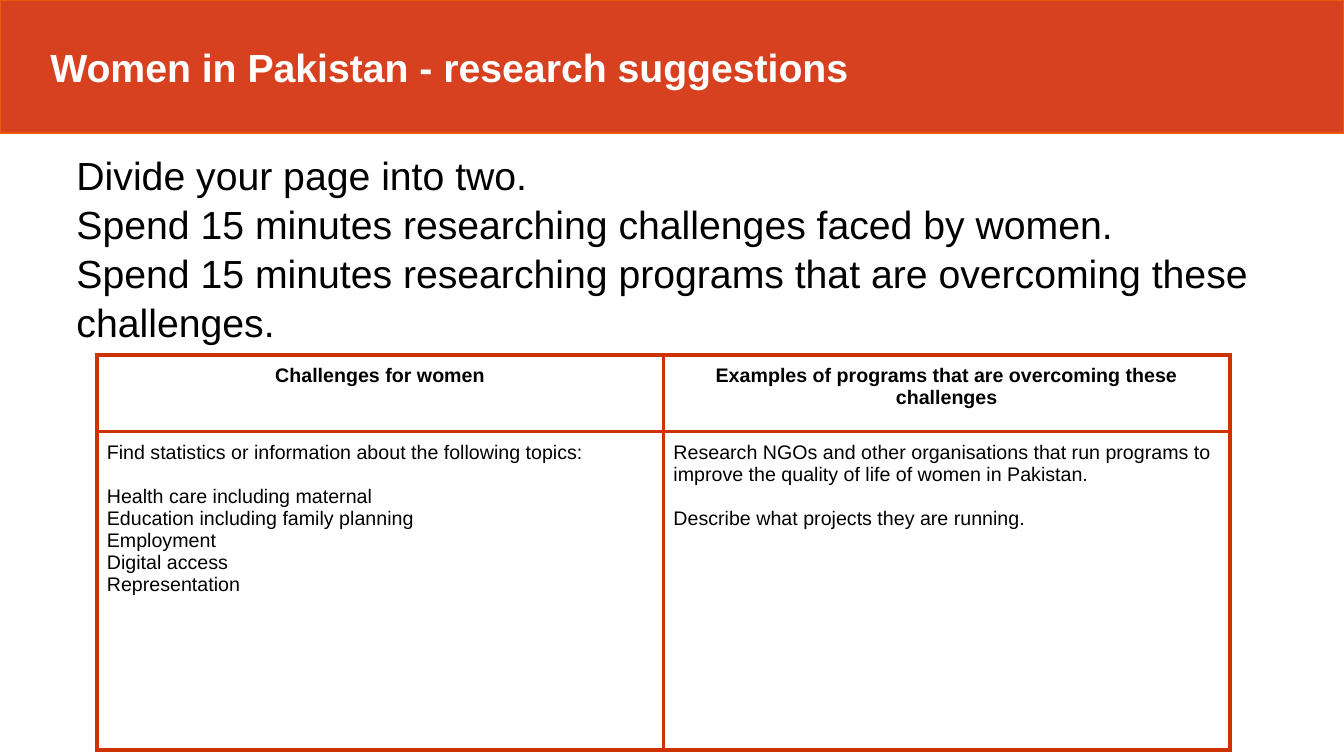
from dataclasses import dataclass

from lxml.etree import SubElement
from pptx import Presentation
from pptx.dml.color import RGBColor
from pptx.enum.shapes import MSO_SHAPE
from pptx.enum.text import MSO_ANCHOR, PP_ALIGN
from pptx.oxml.ns import qn
from pptx.slide import Slide
from pptx.table import _Cell
from pptx.text.text import TextFrame
from pptx.util import Emu, Pt

PAGE_WIDTH, PAGE_HEIGHT = 1333, 750
BANNER_HEIGHT = 132
INSET = 10
RULE_COLOUR = "CC3300"
RULE_POINTS = 3
ROW_HEIGHTS = (76, 316)
COLUMN_WIDTH = 562


@dataclass
class Line:
    text: str
    size: int = 14
    bold: bool = False
    colour: str = "000000"
    align: PP_ALIGN = PP_ALIGN.LEFT
    before: int = 0
    spacing: float = 1.0


@dataclass
class Topic:
    heading: str
    lines: list[Line]


TITLE = Line("Women in Pakistan - research suggestions", 28, True, "FFFFFF")

INSTRUCTIONS = [
    Line(text, 28, spacing=1.04)
    for text in (
        "Divide your page into two.",
        "Spend 15 minutes researching challenges faced by women.",
        "Spend 15 minutes researching programs that are overcoming these challenges.",
    )
]

TOPICS = [
    Topic("Challenges for women", [
        Line("Find statistics or information about the following topics:"),
        Line("Health care including maternal", before=16),
        Line("Education including family planning"),
        Line("Employment"),
        Line("Digital access"),
        Line("Representation"),
    ]),
    Topic("Examples of programs that are overcoming these challenges", [
        Line("Research NGOs and other organisations that run programs to "
             "improve the quality of life of women in Pakistan."),
        Line("Describe what projects they are running.", before=16),
    ]),
]


def px(length: int) -> Emu:
    """Convert px to EMU, at 100 px to the inch."""
    return Emu(length * 9144)


def colour(value: str) -> RGBColor:
    return RGBColor.from_string(value)


def write_lines(frame: TextFrame, lines: list[Line]) -> None:
    frame.word_wrap = True
    for index, line in enumerate(lines):
        paragraph = frame.paragraphs[0] if index == 0 else frame.add_paragraph()
        layout = {
            "alignment": line.align,
            "space_before": Pt(line.before),
            "line_spacing": line.spacing,
        }
        for name, value in layout.items():
            setattr(paragraph, name, value)
        span = paragraph.add_run()
        span.text = line.text
        style = {"name": "Arial", "size": Pt(line.size), "bold": line.bold}
        for name, value in style.items():
            setattr(span.font, name, value)
        span.font.color.rgb = colour(line.colour)


def set_margins(target: TextFrame | _Cell) -> None:
    for side in ("left", "top", "right", "bottom"):
        setattr(target, f"margin_{side}", px(INSET))


def add_banner(page: Slide) -> None:
    banner = page.shapes.add_shape(
        MSO_SHAPE.RECTANGLE, 0, 0, px(PAGE_WIDTH), px(BANNER_HEIGHT))
    banner.shadow.inherit = False
    banner.fill.solid()
    banner.fill.fore_color.rgb = colour("D74120")
    banner.line.color.rgb = colour("EA5B0C")
    banner.line.width = Pt(1)
    frame = banner.text_frame
    frame.vertical_anchor = MSO_ANCHOR.MIDDLE
    frame.margin_left = px(50)
    write_lines(frame, [TITLE])


def add_instructions(page: Slide) -> None:
    box = page.shapes.add_textbox(px(66), px(138), px(1209), px(209))
    set_margins(box.text_frame)
    write_lines(box.text_frame, INSTRUCTIONS)


def outline_cell(cell: _Cell) -> None:
    properties = cell._tc.get_or_add_tcPr()
    for edge in ("a:lnL", "a:lnR", "a:lnT", "a:lnB"):
        rule = SubElement(properties, qn(edge), w=str(Pt(RULE_POINTS)))
        fill = SubElement(rule, qn("a:solidFill"))
        SubElement(fill, qn("a:srgbClr"), val=RULE_COLOUR)


def fill_cell(cell: _Cell, lines: list[Line]) -> None:
    set_margins(cell)
    outline_cell(cell)
    cell.fill.background()
    write_lines(cell.text_frame, lines)


def add_research_table(page: Slide) -> None:
    table = page.shapes.add_table(
        len(ROW_HEIGHTS), len(TOPICS), px(96), px(352),
        px(COLUMN_WIDTH * len(TOPICS)), px(sum(ROW_HEIGHTS))).table
    table.first_row = table.horz_banding = False
    for row, height in zip(table.rows, ROW_HEIGHTS):
        row.height = px(height)
    for index, topic in enumerate(TOPICS):
        table.columns[index].width = px(COLUMN_WIDTH)
        heading = Line(topic.heading, bold=True, align=PP_ALIGN.CENTER)
        fill_cell(table.cell(0, index), [heading])
        fill_cell(table.cell(1, index), topic.lines)


def main() -> None:
    deck = Presentation()
    deck.slide_width, deck.slide_height = px(PAGE_WIDTH), px(PAGE_HEIGHT)
    page = deck.slides.add_slide(deck.slide_layouts[6])
    add_banner(page)
    add_research_table(page)
    add_instructions(page)
    deck.save("out.pptx")


if __name__ == "__main__":
    main()
